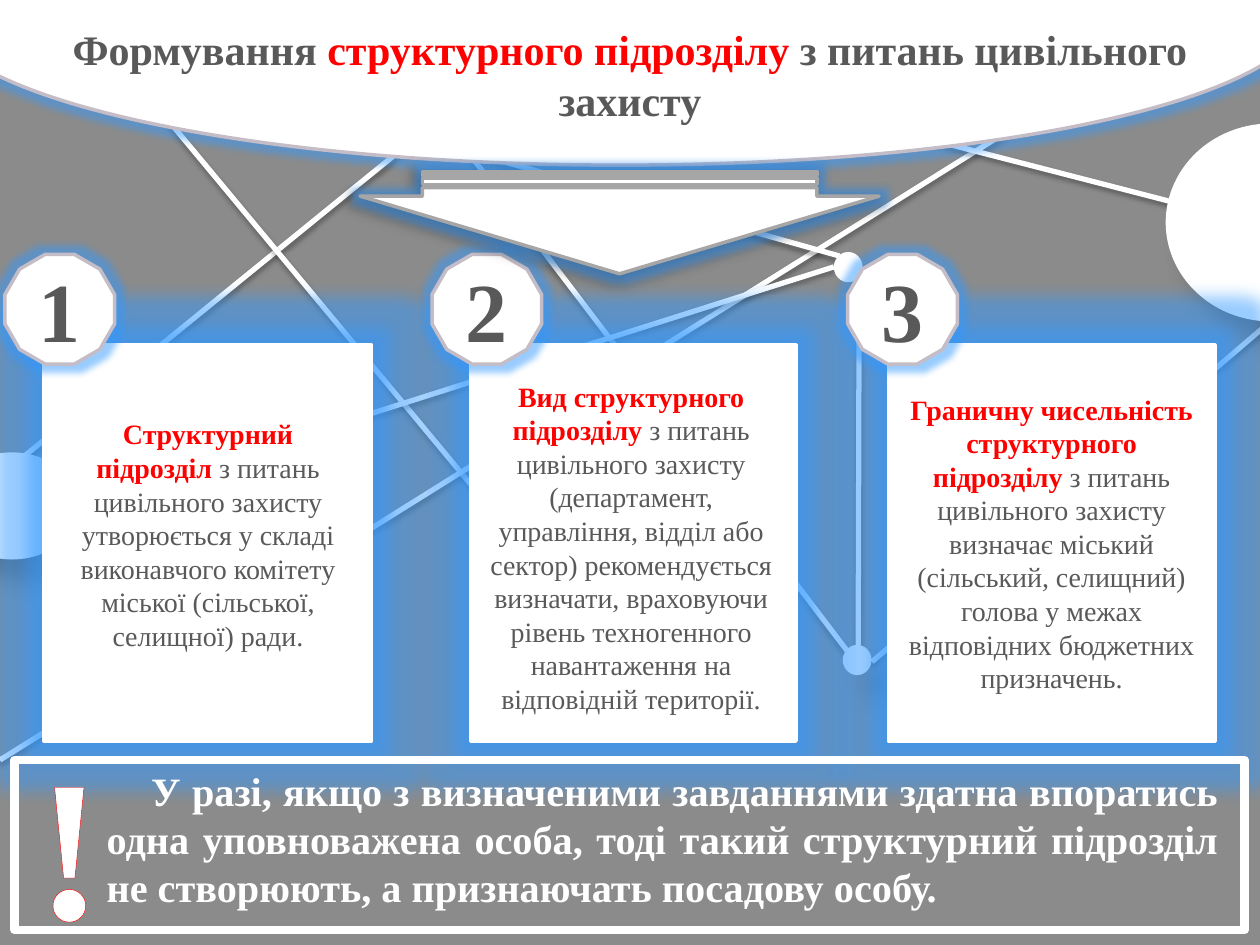
"""Build the slide on forming a civil protection unit."""
from dataclasses import dataclass
from typing import NamedTuple, Optional

from lxml.etree import SubElement
from pptx import Presentation
from pptx.dml.color import RGBColor
from pptx.enum.shapes import MSO_CONNECTOR, MSO_SHAPE
from pptx.enum.text import MSO_ANCHOR, PP_ALIGN
from pptx.oxml import parse_xml
from pptx.oxml.ns import nsdecls, qn
from pptx.util import Cm, Pt

WHITE = RGBColor(0xFF, 0xFF, 0xFF)
BACKDROP = RGBColor(0x8B, 0x8B, 0x8B)
DARK = RGBColor(0x59, 0x59, 0x59)
RED = RGBColor(0xFF, 0x00, 0x00)
MAUVE = RGBColor(0xC4, 0xBC, 0xC6)
SILVER = RGBColor(0xA6, 0xA6, 0xA6)
BLACK = RGBColor(0x00, 0x00, 0x00)
BLUE = RGBColor(0x33, 0x99, 0xFF)
FONT = "Times New Roman"
CARD_TOP, CARD_HEIGHT = 6.96, 7.98
BADGE_TOP, BADGE_SIZE = 5.13, 2.21


class Box(NamedTuple):
    """Left, top, width and height in centimetres."""
    x: float
    y: float
    w: float
    h: float


class Shadow(NamedTuple):
    """Opacity in percent, blur and distance in points, angle in degrees."""
    opacity: int
    blur: float
    distance: float
    angle: int


class Segment(NamedTuple):
    """Start and end of a network line in centimetres."""
    x1: float
    y1: float
    x2: float
    y2: float


class Span(NamedTuple):
    """A piece of text with its own look."""
    text: str
    color: RGBColor
    bold: bool = True
    outline: float = 0


@dataclass
class Card:
    """A numbered card; its text sits in its own box when one is given."""
    x: float
    width: float
    badge_x: float
    lead: str
    rest: str
    text_box: Optional[Box] = None


NODE_SHADOW = Shadow(30, 15, 18, 45)
LINE_SHADOW = Shadow(35, 3.1, 1.8, 90)
ARROW_SHADOW = Shadow(40, 4, 3, 135)
SEGMENTS = [
    Segment(10.95, 0.69, 0.3, 9.35),
    Segment(26.9, 5.38, 17.58, 13.34),
    Segment(17.07, 13.11, 3.86, -4.27),
    Segment(17.32, 5.59, 17.3, 13),
    Segment(1.8, 0.51, 13.11, 14.12),
    Segment(25.32, -0.48, 0, 15.32),
    Segment(11.18, 0.86, 27.74, 5.13),
    Segment(1.57, 10.21, 16.81, 5.38),
    Segment(2.36, 1.07, 16.92, 5.16),
]
NODES = [
    Box(-1.09, 9.12, 2.67, 2.16),
    Box(16.81, 5.08, 0.58, 0.61),
    Box(16.99, 13, 0.58, 0.61),
    Box(23.5, 2.49, 4.24, 3.99),
]
CARDS = [
    Card(0.89, 6.6, 0.1, "Структурний підрозділ ",
         "з питань цивільного захисту утворюється у складі виконавчого "
         "комітету міської (сільської, селищної) ради.",
         Box(1.02, 8.28, 6.35, 5.05)),
    Card(9.5, 6.55, 8.71, "Вид структурного підрозділу ",
         "з питань цивільного захисту (департамент, управління, відділ або "
         "сектор) рекомендується визначати, враховуючи рівень техногенного "
         "навантаження на відповідній території.",
         Box(9.55, 7.52, 6.35, 7.09)),
    Card(17.91, 6.58, 17.09, "Граничну чисельність структурного підрозділу ",
         "з питань цивільного захисту визначає міський (сільський, селищний) "
         "голова у межах відповідних бюджетних призначень."),
]


def add_color(parent, color: RGBColor, opacity: int) -> None:
    clr = SubElement(parent, qn("a:srgbClr"), val=str(color))
    SubElement(clr, qn("a:alpha"), val=str(opacity * 1000))


def add_shadow(effects, shadow: Shadow) -> None:
    node = SubElement(effects, qn("a:outerShdw"), blurRad=str(Pt(shadow.blur)),
                      dist=str(Pt(shadow.distance)), dir=str(shadow.angle * 60000),
                      algn="ctr", rotWithShape="0")
    add_color(node, BLACK, shadow.opacity)


def add_segment(s, seg: Segment) -> None:
    line = s.shapes.add_connector(MSO_CONNECTOR.STRAIGHT, *(Cm(v) for v in seg))
    line.line.color.rgb = WHITE
    line.line.width = Pt(3)
    add_shadow(SubElement(line._element.spPr, qn("a:effectLst")), LINE_SHADOW)


def add_figure(s, kind: MSO_SHAPE, box: Box, line: Optional[RGBColor] = None,
               width: float = 2, filled: bool = True, glow: float = 0,
               shadow: Optional[Shadow] = None):
    sp = s.shapes.add_shape(kind, *(Cm(v) for v in box))
    if filled:
        sp.fill.solid()
        sp.fill.fore_color.rgb = WHITE
    else:
        sp.fill.background()
    if line is None:
        sp.line.fill.background()
    else:
        sp.line.color.rgb = line
        sp.line.width = Pt(width)
    sp.shadow.inherit = False
    effects = sp._element.spPr.find(qn("a:effectLst"))
    if glow:
        add_color(SubElement(effects, qn("a:glow"), rad=str(Pt(glow))), BLUE, 50)
    if shadow:
        add_shadow(effects, shadow)
    return sp


def write(sp, spans: list[Span], size: float, anchor=MSO_ANCHOR.TOP,
          align=PP_ALIGN.CENTER):
    tf = sp.text_frame
    tf.word_wrap = True
    tf.vertical_anchor = anchor
    p = tf.paragraphs[0]
    p.alignment = align
    for span in spans:
        r = p.add_run()
        r.text = span.text
        r.font.name = FONT
        r.font.size = Pt(size)
        r.font.bold = span.bold
        r.font.color.rgb = span.color
        if span.outline:
            r.font._element.insert(0, parse_xml(
                f'<a:ln {nsdecls("a")} w="{Pt(span.outline)}"><a:solidFill>'
                f'<a:srgbClr val="{RED}"/></a:solidFill></a:ln>'))
    return p


def add_text(s, box: Box, spans: list[Span], size: float, **layout):
    return write(s.shapes.add_textbox(*(Cm(v) for v in box)), spans, size, **layout)


def add_card(s, number: int, card: Card) -> None:
    sp = add_figure(s, MSO_SHAPE.RECTANGLE,
                    Box(card.x, CARD_TOP, card.width, CARD_HEIGHT), WHITE, glow=18)
    spans = [Span(card.lead, RED), Span(card.rest, DARK, False)]
    if card.text_box:
        add_text(s, card.text_box, spans, 16)
    else:
        write(sp, spans, 16, MSO_ANCHOR.MIDDLE)
    badge = add_figure(s, MSO_SHAPE.DODECAGON,
                       Box(card.badge_x, BADGE_TOP, BADGE_SIZE, BADGE_SIZE), MAUVE, glow=8)
    write(badge, [Span(str(number), DARK)], 48, MSO_ANCHOR.MIDDLE)


def main() -> None:
    prs = Presentation()
    prs.slide_width, prs.slide_height = Cm(25.4), Cm(19.05)
    s = prs.slides.add_slide(prs.slide_layouts[6])
    s.background.fill.solid()
    s.background.fill.fore_color.rgb = BACKDROP
    for seg in SEGMENTS:
        add_segment(s, seg)
    for node in NODES:
        add_figure(s, MSO_SHAPE.OVAL, node, shadow=NODE_SHADOW)
    add_figure(s, MSO_SHAPE.OVAL, Box(-1.3, -2.87, 27.61, 6.2), MAUVE, glow=8)
    add_text(s, Box(0, -0.28, 25.4, 2.92),
             [Span("Формування ", DARK), Span("структурного підрозділу ", RED, outline=0.75),
              Span("з питань цивільного захисту", DARK)], 24, anchor=MSO_ANCHOR.BOTTOM)
    for number, card in enumerate(CARDS, 1):
        add_card(s, number, card)
    arrow = add_figure(s, MSO_SHAPE.STRIPED_RIGHT_ARROW, Box(11.46, -0.74, 2.06, 10.46),
                       SILVER, glow=8, shadow=ARROW_SHADOW)
    arrow.rotation = 90
    arrow.adjustments[0], arrow.adjustments[1] = 0.76, 0.76
    add_figure(s, MSO_SHAPE.RECTANGLE, Box(0.3, 15.32, 24.79, 3.43), WHITE, 5, filled=False)
    add_text(s, Box(-0.3, 14.35, 3.4, 5.18), [Span("!", WHITE, outline=1)], 115)
    p = add_text(s, Box(1.9, 15.32, 22.94, 3.2),
                 [Span("У разі, якщо з визначеними завданнями здатна впоратись одна "
                       "уповноважена особа, тоді такий структурний підрозділ не "
                       "створюють, а признаючать посадову особу.", WHITE)],
                 23, align=PP_ALIGN.JUSTIFY)
    p._p.get_or_add_pPr().set("indent", str(Cm(0.9)))
    prs.save("out.pptx")


if __name__ == "__main__":
    main()
